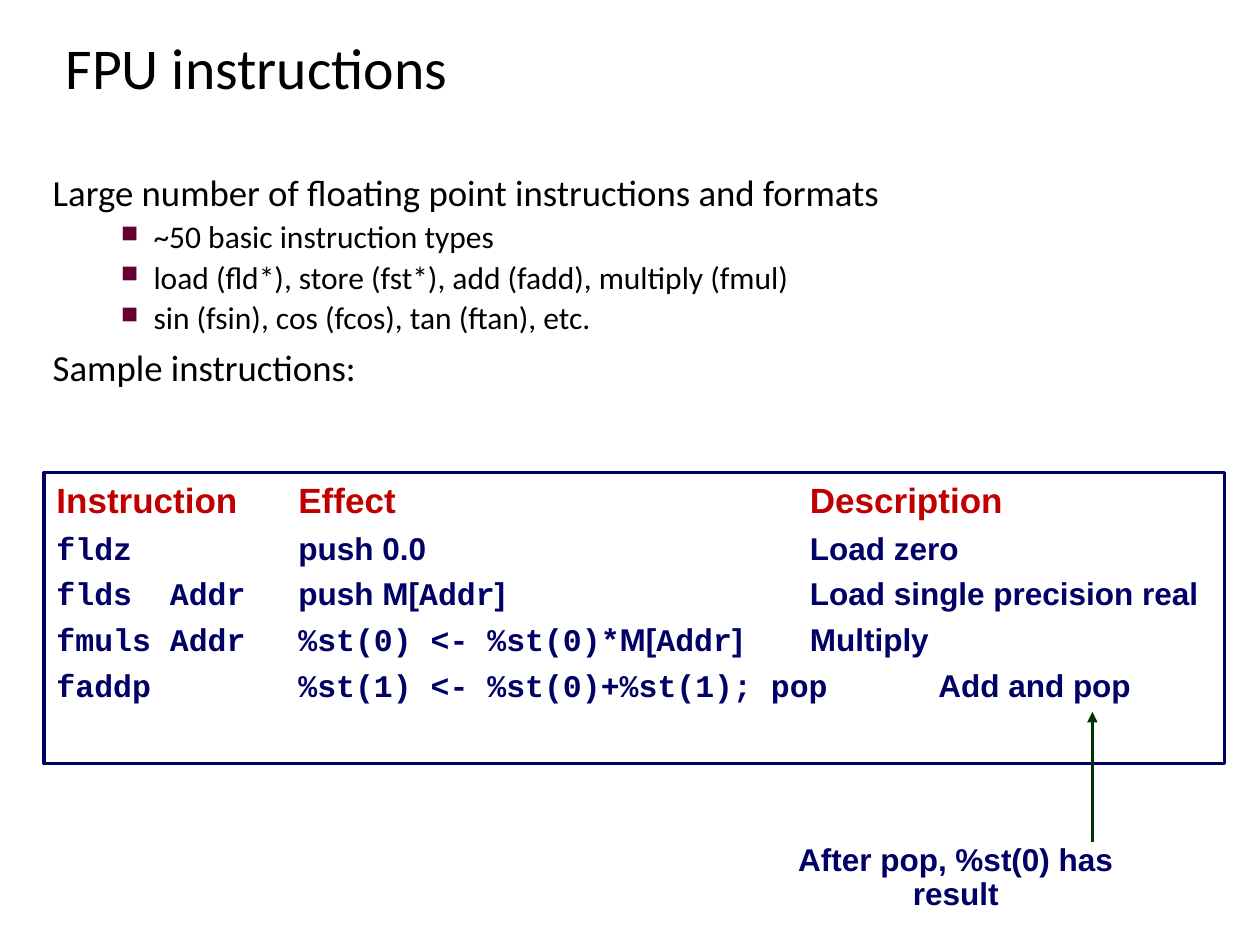
from typing import NamedTuple

from lxml import etree
from pptx import Presentation
from pptx.dml.color import RGBColor
from pptx.enum.shapes import MSO_CONNECTOR, MSO_SHAPE
from pptx.enum.text import MSO_ANCHOR, PP_ALIGN
from pptx.oxml.ns import qn
from pptx.util import Inches, Pt

LEFT, CENTER = PP_ALIGN.LEFT, PP_ALIGN.CENTER
TOP, MIDDLE = MSO_ANCHOR.TOP, MSO_ANCHOR.MIDDLE
RECTANGLE, STRAIGHT = MSO_SHAPE.RECTANGLE, MSO_CONNECTOR.STRAIGHT

COLORS = {"text": "000000", "navy": "000066", "heading": "C00000",
          "bullet": "660033", "arrow": "003300"}
SANS, CODE, BODY = "Arial", "Courier New", "Calibri"
COLUMN_TABS = (1.92, 5.98, 7.0)


class Span(NamedTuple):
    text: str
    font: str = SANS


class Point(NamedTuple):
    text: str
    bulleted: bool = False


POINTS = [
    Point("Large number of floating point instructions and formats"),
    Point("~50 basic instruction types", True),
    Point("load (fld*), store (fst*), add (fadd), multiply (fmul)", True),
    Point("sin (fsin), cos (fcos), tan (ftan), etc.", True),
    Point("Sample instructions:"),
]

INSTRUCTIONS = [
    [Span("fldz\t", CODE), Span("push 0.0\tLoad zero")],
    [Span("flds  Addr\t", CODE), Span("push M["), Span("Addr", CODE),
     Span("]\tLoad single precision real")],
    [Span("fmuls Addr\t%st(0) <- %st(0)*", CODE), Span("M["),
     Span("Addr", CODE), Span("]\tMultiply")],
    [Span("faddp\t%st(1) <- %st(0)+%st(1); pop", CODE), Span("\tAdd and pop")],
]


def rgb(name: str) -> RGBColor:
    return RGBColor.from_string(COLORS[name])


def set_font(font, size: float, color: str, name: str = SANS, bold: bool = False) -> None:
    font.size, font.name, font.bold = Pt(size), name, bold
    font.color.rgb = rgb(color)


def add_paragraph(frame, first: bool):
    return frame.paragraphs[0] if first else frame.add_paragraph()


def add_text_box(slide, left: float, top: float, width: float, height: float):
    frame = slide.shapes.add_textbox(
        Inches(left), Inches(top), Inches(width), Inches(height)).text_frame
    frame.word_wrap = True
    return frame


def set_bullet(para) -> None:
    """Give the paragraph a small square bullet with a hanging indent."""
    properties = para._p.get_or_add_pPr()
    properties.set("marL", str(Inches(0.8)))
    properties.set("indent", str(Inches(-0.26)))
    color = etree.SubElement(properties, qn("a:buClr"))
    etree.SubElement(color, qn("a:srgbClr"), val=COLORS["bullet"])
    etree.SubElement(properties, qn("a:buSzPct"), val="75000")
    etree.SubElement(properties, qn("a:buChar"), char="■")


def set_tabs(para, positions: tuple[float, ...]) -> None:
    tabs = etree.SubElement(para._p.get_or_add_pPr(), qn("a:tabLst"))
    for position in positions:
        etree.SubElement(tabs, qn("a:tab"), pos=str(Inches(position)), algn="l")


def add_title(slide, text: str) -> None:
    title = slide.shapes.title
    title.left, title.top = Inches(0.42), Inches(0.25)
    title.width, title.height = Inches(6.65), Inches(0.63)
    title.text_frame.vertical_anchor = MIDDLE
    para = title.text_frame.paragraphs[0]
    para.text, para.alignment, para.line_spacing = text, LEFT, 0.9
    set_font(para.font, 33, "text", BODY)


def add_points(slide, points: list[Point]) -> None:
    frame = add_text_box(slide, 0.32, 1.34, 9.09, 2.0)
    for index, point in enumerate(points):
        para = add_paragraph(frame, index == 0)
        para.text, para.line_spacing = point.text, 0.9
        para.space_before = Pt(3.8 if point.bulleted else 7.5)
        if point.bulleted:
            set_bullet(para)
        set_font(para.font, 18 if point.bulleted else 21, "text", BODY)


def add_instruction_box(slide, rows: list[list[Span]]) -> None:
    box = slide.shapes.add_shape(
        RECTANGLE, Inches(0.35), Inches(3.75), Inches(9.37), Inches(2.31))
    box.shadow.inherit = False
    box.fill.background()
    box.line.color.rgb, box.line.width = rgb("navy"), Pt(2)
    frame = box.text_frame
    frame.word_wrap, frame.vertical_anchor = True, TOP
    header = [Span("Instruction\tEffect\tDescription")]
    for index, spans in enumerate([header, *rows]):
        is_header = index == 0
        para = add_paragraph(frame, is_header)
        para.alignment = LEFT
        para.space_before = Pt(5 if is_header else 4.5)
        set_tabs(para, COLUMN_TABS)
        for span in spans:
            run = para.add_run()
            run.text = span.text
            set_font(run.font, 20 if is_header else 18,
                     "heading" if is_header else "navy", span.font, bold=True)


def add_arrow(slide, x: float, start_y: float, end_y: float) -> None:
    arrow = slide.shapes.add_connector(
        STRAIGHT, Inches(x), Inches(start_y), Inches(x), Inches(end_y))
    arrow.line.color.rgb, arrow.line.width = rgb("arrow"), Pt(1.5)
    etree.SubElement(arrow.line._get_or_add_ln(), qn("a:tailEnd"), type="triangle")
    etree.SubElement(arrow._element.spPr, qn("a:effectLst"))


def add_note(slide, text: str) -> None:
    frame = add_text_box(slide, 5.91, 6.65, 3.35, 0.6)
    para = frame.paragraphs[0]
    para.text, para.alignment, para.line_spacing = text, CENTER, 0.9
    set_font(para.font, 18, "navy", bold=True)


def main() -> None:
    deck = Presentation()
    deck.slide_width, deck.slide_height = Inches(10), Inches(7.5)
    slide = deck.slides.add_slide(deck.slide_layouts[5])
    add_title(slide, "FPU instructions")
    add_points(slide, POINTS)
    add_instruction_box(slide, INSTRUCTIONS)
    add_arrow(slide, 8.67, 6.68, 5.65)
    add_note(slide, "After pop, %st(0) has result")
    deck.save("out.pptx")


if __name__ == "__main__":
    main()
